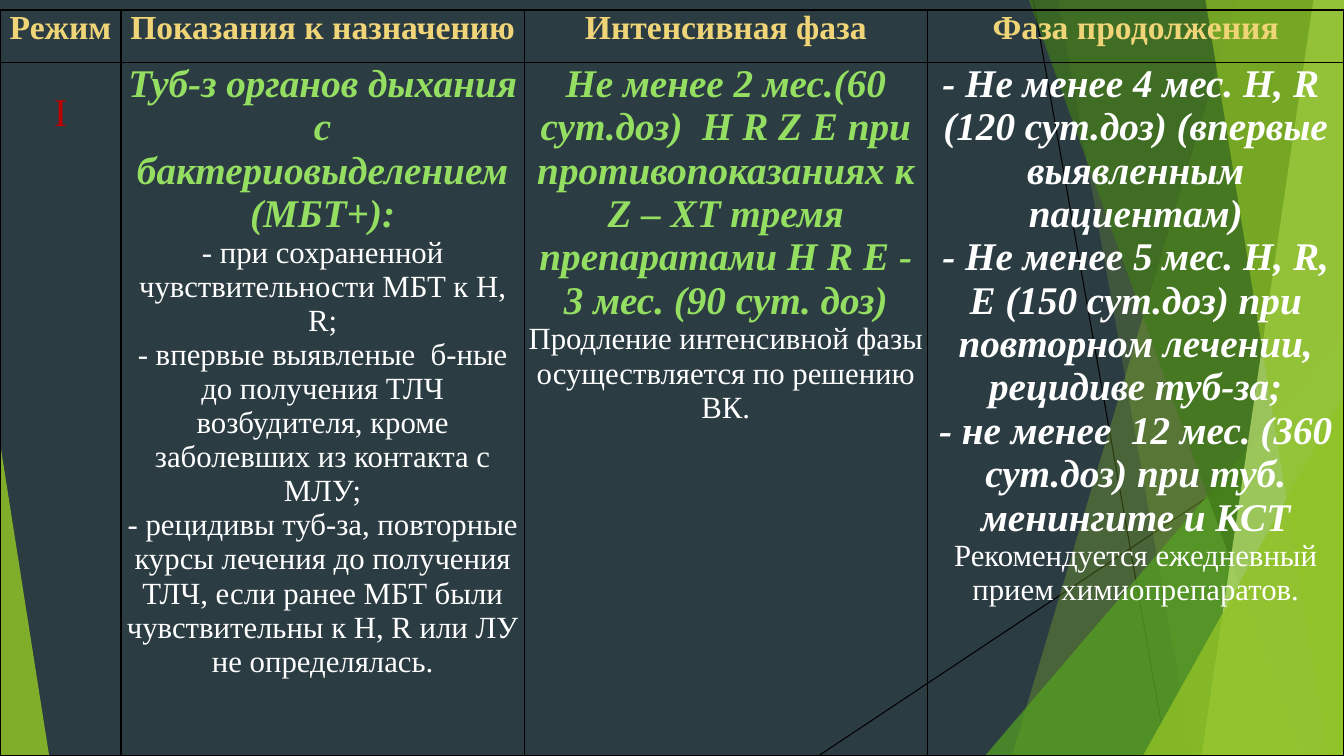
from lxml import etree
from pptx import Presentation
from pptx.dml.color import RGBColor
from pptx.enum.shapes import MSO_CONNECTOR, MSO_SHAPE
from pptx.enum.text import PP_ALIGN
from pptx.oxml import parse_xml
from pptx.oxml.ns import qn
from pptx.util import Cm, Pt

STRAIGHT = MSO_CONNECTOR.STRAIGHT
TRIANGLE = MSO_SHAPE.ISOSCELES_TRIANGLE
CENTER = PP_ALIGN.CENTER
WIDTH, HEIGHT = 33.87, 19.05
DRAWING = "http://schemas.openxmlformats.org/drawingml/2006/main"

BLACK, WHITE, LIME = "000000", "FFFFFF", "90C226"
HEADING = {"size": Pt(24), "bold": True, "color": "F0D578"}
REGIMEN = {"size": Pt(28), "color": "C00000"}
ACCENT = {"size": Pt(28), "bold": True, "italic": True, "color": "94DE61"}
STRONG = {**ACCENT, "color": WHITE}
BODY = {"size": Pt(22), "color": WHITE}

HEADINGS = ["Режим", "Показания к назначению", "Интенсивная фаза", "Фаза продолжения"]
DETAILS = [
    [("I", REGIMEN)],
    [
        ("Туб-з органов дыхания с бактериовыделением (МБТ+):", ACCENT),
        ("- при сохраненной чувствительности МБТ к H, R;", BODY),
        ("- впервые выявленые  б-ные до получения ТЛЧ возбудителя, "
         "кроме заболевших из контакта с МЛУ;", BODY),
        ("- рецидивы туб-за, повторные курсы лечения до получения ТЛЧ, "
         "если ранее МБТ были чувствительны к H, R или ЛУ не определялась.", BODY),
    ],
    [
        ("Не менее 2 мес.(60 сут.доз)  H R Z E при противопоказаниях к "
         "Z – ХТ тремя препаратами H R E - 3 мес. (90 сут. доз)", ACCENT),
        ("Продление интенсивной фазы осуществляется по решению ВК.", BODY),
    ],
    [
        ("- Не менее 4 мес. H, R  (120 сут.доз) (впервые выявленным пациентам)", STRONG),
        ("- Не менее 5 мес. H, R, E (150 сут.доз) при повторном лечении, "
         "рецидиве туб-за;", STRONG),
        ("- не менее  12 мес. (360 сут.доз) при туб. менингите и КСТ", STRONG),
        ("Рекомендуется ежедневный прием химиопрепаратов.", BODY),
    ],
]


def rgb(value):
    return RGBColor.from_string(value)


class SlideBuilder:
    font = "Times New Roman"

    def __init__(self, deck, background):
        self.slide = deck.slides.add_slide(deck.slide_layouts[6])
        self.shapes = self.slide.shapes
        fill = self.slide.background.fill
        fill.solid()
        fill.fore_color.rgb = rgb(background)

    def line(self, *ends):
        connector = self.shapes.add_connector(STRAIGHT, *map(Cm, ends))
        connector.line.color.rgb = rgb(BLACK)
        connector.line.width = Pt(0.75)
        etree.SubElement(connector._element.spPr, qn("a:effectLst"))

    def paint(self, shape, color, opacity):
        shape.shadow.inherit = False
        shape.line.fill.background()
        shape.fill.solid()
        shape.fill.fore_color.rgb = rgb(color)
        tone = shape._element.spPr.find(".//" + qn("a:srgbClr"))
        etree.SubElement(tone, qn("a:alpha"), val=str(opacity * 1000))

    def band(self, top_x, bottom_x, color, opacity):
        corners = [(WIDTH, 0), (WIDTH, HEIGHT), (bottom_x, HEIGHT)]
        outline = self.shapes.build_freeform(Cm(top_x), 0)
        outline.add_line_segments([(Cm(x), Cm(y)) for x, y in corners], close=True)
        self.paint(outline.convert_to_shape(), color, opacity)

    def triangle(self, left, width, height, apex, color, opacity):
        shape = self.shapes.add_shape(
            TRIANGLE, Cm(left), Cm(HEIGHT - height), Cm(width), Cm(height))
        shape.adjustments[0] = apex
        self.paint(shape, color, opacity)

    def fill_text(self, cell, paragraphs):
        for index, (text, style) in enumerate(paragraphs):
            para = cell.text_frame.add_paragraph() if index else cell.text_frame.paragraphs[0]
            para.alignment = CENTER
            span = para.add_run()
            span.text = text
            values = {"name": self.font, "bold": False, "italic": False, **style}
            span.font.color.rgb = rgb(values.pop("color"))
            for name, value in values.items():
                setattr(span.font, name, value)

    def format_cell(self, cell):
        margins = {"margin_left": Cm(0.08), "margin_right": Cm(0.08),
                   "margin_top": 0, "margin_bottom": 0}
        for name, value in margins.items():
            setattr(cell, name, value)
        cell.fill.background()
        for index, side in enumerate("LRTB"):
            cell._tc.tcPr.insert(index, parse_xml(
                f'<a:ln{side} xmlns:a="{DRAWING}" w="{Pt(1)}"><a:solidFill>'
                f'<a:srgbClr val="{BLACK}"/></a:solidFill></a:ln{side}>'))

    def table(self, top, widths, heights, rows):
        frame = self.shapes.add_table(
            len(rows), len(widths), 0, Cm(top), Cm(sum(widths)), Cm(sum(heights)))
        table = frame.table
        table.first_row = table.horz_banding = False
        for column, width in zip(table.columns, widths):
            column.width = Cm(width)
        for row, height, contents in zip(table.rows, heights, rows):
            row.height = Cm(height)
            for cell, paragraphs in zip(row.cells, contents):
                self.format_cell(cell)
                self.fill_text(cell, paragraphs)
        return table


def main():
    deck = Presentation()
    deck.slide_width, deck.slide_height = Cm(WIDTH), Cm(HEIGHT)
    page = SlideBuilder(deck, "2C3C43")

    page.line(26.04, 0, 29.41, HEIGHT)
    page.line(WIDTH, 10.24, 20.62, HEIGHT)
    page.band(31.19, 25.5, LIME, 30)
    page.band(26.67, 30.05, LIME, 20)
    page.triangle(24.82, 9.05, 10.59, 1, "54A021", 72)
    page.band(25.93, 32.79, "3F7819", 70)
    page.band(33.1, 30.28, "C0E474", 70)
    page.band(30.38, 33.48, LIME, 65)
    page.triangle(28.8, 5.07, 9.07, 1, LIME, 80)
    page.triangle(0, 1.24, 7.9, 0, LIME, 85)

    header = [[(text, HEADING)] for text in HEADINGS]
    regimens = page.table(
        0.25, [3.05, 10.16, 10.16, 10.5], [1.32, 17.48], [header, DETAILS])
    regimens.cell(1, 0).margin_top = Cm(0.73)
    deck.save("out.pptx")


if __name__ == "__main__":
    main()
